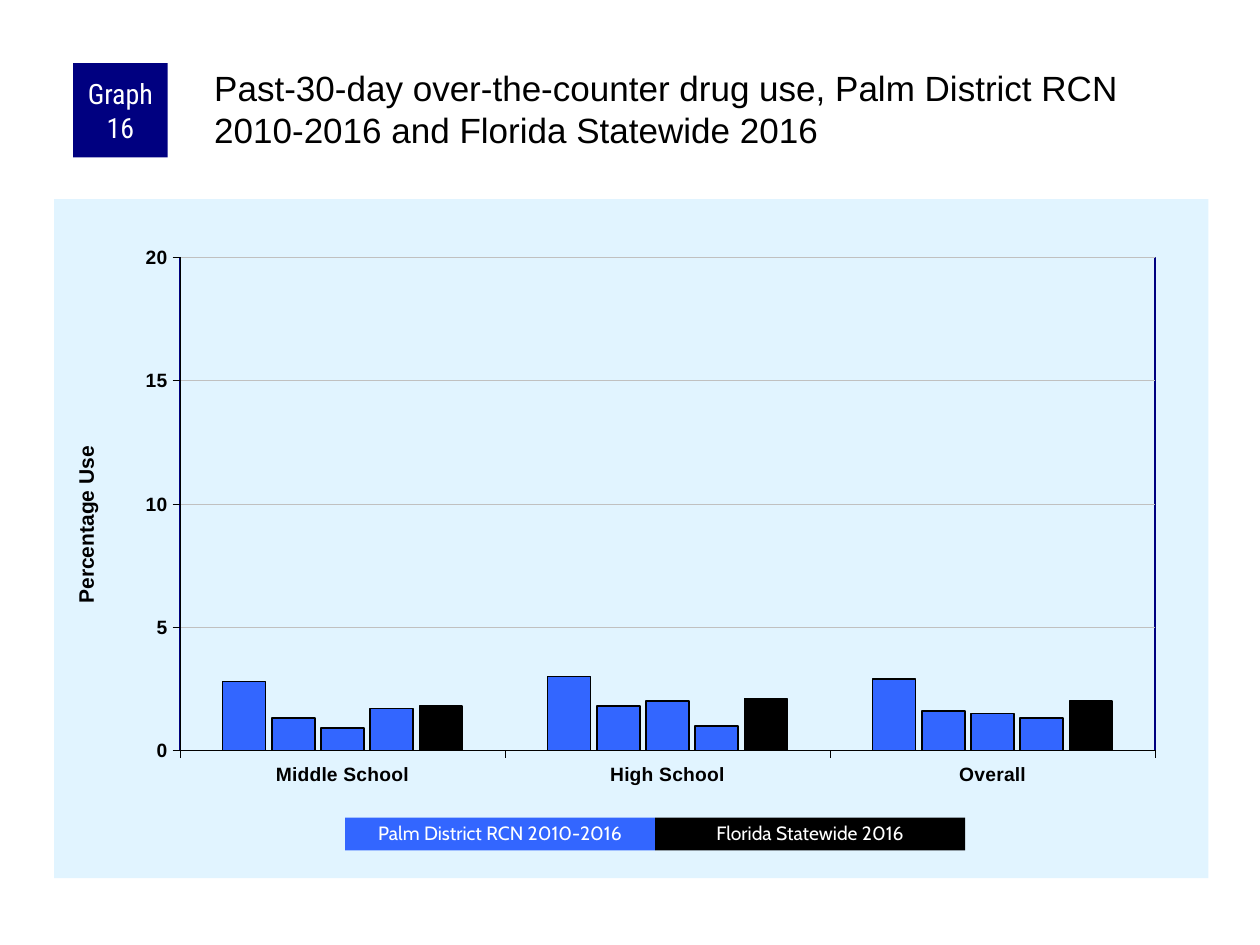
from lxml import etree
from pptx import Presentation
from pptx import util as u
from pptx.chart.data import CategoryChartData
from pptx.dml.color import RGBColor
from pptx.enum import chart as charts, shapes, text
from pptx.oxml import parse_xml
from pptx.oxml.ns import nsdecls, qn

COLORS = {
    "navy": "000080",
    "blue": "3366FF",
    "black": "000000",
    "white": "FFFFFF",
    "panel": "E1F4FF",
    "grid": "C0C0C0",
}
CATEGORIES = ["Middle School", "High School", "Overall"]
SERIES = [
    ("Series 1", [2.8, 3, 2.9], "blue"),
    ("Series 2", [1.3, 1.8, 1.6], "blue"),
    ("Series 3", [0.9, 2, 1.5], "blue"),
    ("Series 4", [1.7, 1, 1.3], "blue"),
    ("Series 5", [1.8, 2.1, 2], "black"),
]
REGION = "Palm District RCN 2010-2016"
STATE = "Florida Statewide 2016"
LEGEND = [(REGION, "blue"), (STATE, "black")]


def color(name):
    return RGBColor.from_string(COLORS[name])


def set_font(font, name, size, color_name, bold=False):
    font.name, font.size, font.bold = name, u.Pt(size), bold
    font.color.rgb = color(color_name)


def set_line(line, color_name, width):
    line.color.rgb = color(color_name)
    line.width = u.Pt(width)


def add_box(slide, position, label, fill, font_name, size, line_spacing=None, inset=0.05):
    """Add a borderless filled rectangle with a centred white label."""
    shape = slide.shapes.add_shape(shapes.MSO_SHAPE.RECTANGLE, *map(u.Inches, position))
    shape.shadow.inherit = False
    shape.fill.solid()
    shape.fill.fore_color.rgb = color(fill)
    shape.line.fill.background()
    frame = shape.text_frame
    frame.word_wrap = True
    frame.vertical_anchor = text.MSO_ANCHOR.MIDDLE
    frame.margin_left = frame.margin_right = u.Inches(inset)
    frame.margin_top = frame.margin_bottom = 0
    paragraph = frame.paragraphs[0]
    paragraph.text = label
    paragraph.alignment = text.PP_ALIGN.CENTER
    paragraph.line_spacing = line_spacing
    set_font(paragraph.font, font_name, size, "white")


def add_title(slide, position, label):
    frame = slide.shapes.add_textbox(*map(u.Inches, position)).text_frame
    frame.word_wrap = True
    frame.margin_left = frame.margin_top = u.Inches(0.03)
    frame.margin_right = frame.margin_bottom = 0
    paragraph = frame.paragraphs[0]
    paragraph.text = label
    set_font(paragraph.font, "Arial", 20, "black")


def manual_layout(**values):
    """Return a chart layout element; values are fractions of the chart."""
    layout = parse_xml(f"<c:layout {nsdecls('c')}><c:manualLayout/></c:layout>")
    for tag, value in values.items():
        etree.SubElement(layout[0], qn(f"c:{tag}")).set("val", str(value))
    return layout


def area_format(fill="<a:noFill/>", line="<a:noFill/>"):
    return parse_xml(
        f"<c:spPr {nsdecls('c', 'a')}>{fill}<a:ln w=\"12700\">{line}</a:ln></c:spPr>"
    )


def solid(name):
    return f'<a:solidFill><a:srgbClr val="{COLORS[name]}"/></a:solidFill>'


def style_areas(chart):
    """Place the plot area and colour the panel and the plot border."""
    chart_space = chart.element
    chart_space.find(qn("c:chart")).addnext(area_format(fill=solid("panel")))
    plot_area = chart_space.find(".//" + qn("c:plotArea"))
    for layout in plot_area.findall(qn("c:layout")):
        plot_area.remove(layout)
    plot_area.insert(0, manual_layout(
        layoutTarget="inner", xMode="edge", yMode="edge",
        x=0.109, y=0.086, w=0.845, h=0.726))
    plot_area.append(area_format(line=solid("navy")))


def style_axes(chart):
    for axis in (chart.category_axis, chart.value_axis):
        axis.major_tick_mark = charts.XL_TICK_MARK.OUTSIDE
        axis.minor_tick_mark = charts.XL_TICK_MARK.NONE
        set_font(axis.tick_labels.font, "Arial", 11, "black", bold=True)
        set_line(axis.format.line, "black", 0.25)
    axis = chart.value_axis
    axis.minimum_scale, axis.maximum_scale, axis.major_unit = 0, 20, 5
    axis.has_major_gridlines = True
    set_line(axis.major_gridlines.format.line, "grid", 0.25)
    title = axis.axis_title
    paragraph = title.text_frame.paragraphs[0]
    paragraph.text = "Percentage Use"
    set_font(paragraph.font, "Arial", 12, "black", bold=True)
    title_element = title._element
    for layout in title_element.findall(qn("c:layout")):
        title_element.remove(layout)
    title_element.find(qn("c:tx")).addnext(
        manual_layout(xMode="edge", yMode="edge", x=0.013, y=0.358))


def add_usage_chart(slide, position):
    data = CategoryChartData()
    data.categories = CATEGORIES
    for name, values, _ in SERIES:
        data.add_series(name, values)
    chart = slide.shapes.add_chart(
        charts.XL_CHART_TYPE.COLUMN_CLUSTERED, *map(u.Inches, position), data).chart
    chart.has_legend = chart.has_title = False
    set_font(chart.font, "Arial", 8, "black")
    plot = chart.plots[0]
    plot.gap_width, plot.overlap = 200, -15
    plot.vary_by_categories = False
    for index, (series, (_, _, fill)) in enumerate(zip(plot.series, SERIES)):
        series.format.fill.solid()
        series.format.fill.fore_color.rgb = color(fill)
        set_line(series.format.line, "black", 1 if index else 0.75)
    style_axes(chart)
    style_areas(chart)


def main():
    presentation = Presentation()
    presentation.slide_width, presentation.slide_height = u.Inches(10), u.Inches(7.5)
    slide = presentation.slides.add_slide(presentation.slide_layouts[6])
    add_usage_chart(slide, (0.43, 1.58, 9.16, 5.39))
    add_box(slide, (0.58, 0.5, 0.75, 0.75), "Graph 16", "navy", "Roboto Condensed", 16)
    add_title(slide, (1.67, 0.5, 7.92, 0.83),
              f"Past-30-day over-the-counter drug use, {REGION} and {STATE}")
    width = 2.46
    for index, (label, fill) in enumerate(LEGEND):
        add_box(slide, (2.74 + index * width, 6.49, width, 0.26), label, fill,
                "Cabin", 11, line_spacing=0.9, inset=0.1)
    presentation.save("out.pptx")


if __name__ == "__main__":
    main()
